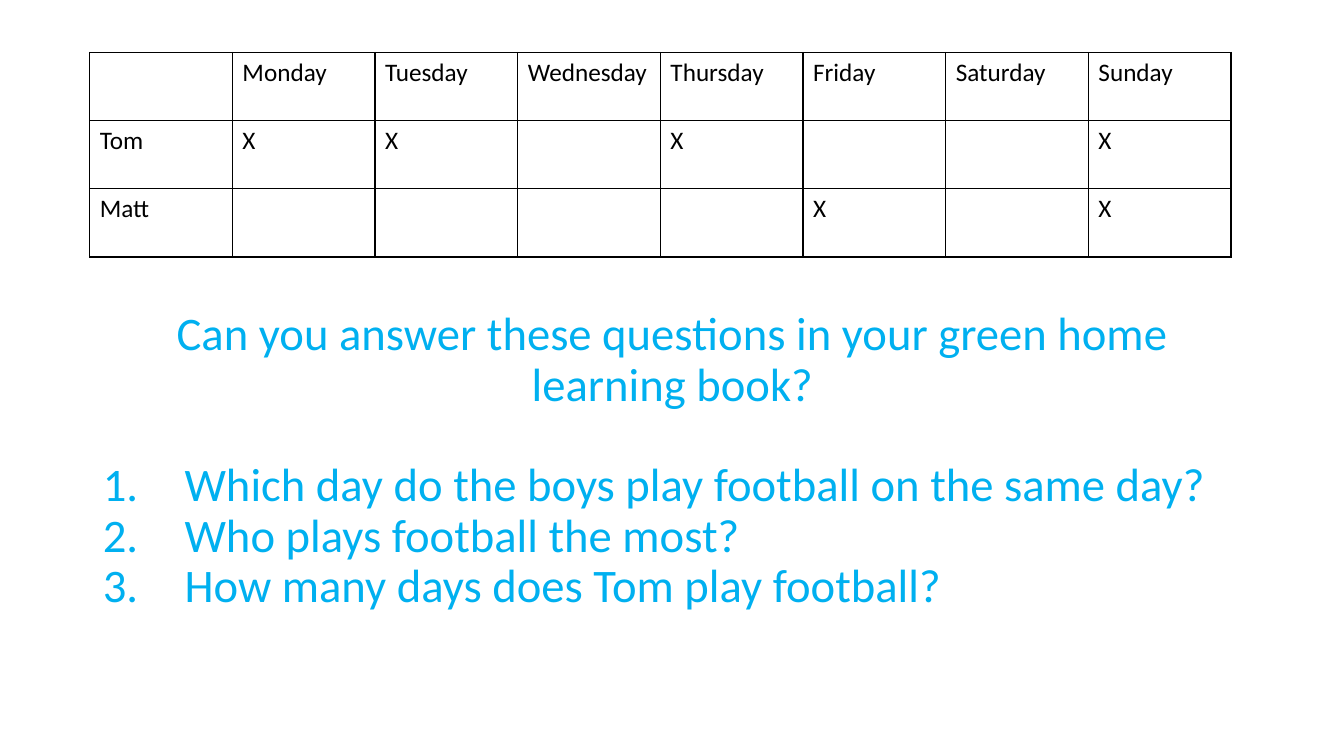
from dataclasses import dataclass

from lxml import etree
from pptx import Presentation
from pptx.dml.color import RGBColor
from pptx.enum import text
from pptx.oxml import ns
from pptx.util import Inches, Pt


@dataclass(frozen=True)
class Theme:
    font: str = "Calibri"
    ink: RGBColor = RGBColor(0, 0, 0)
    accent: RGBColor = RGBColor(0x00, 0xB0, 0xF0)
    table_size: float = 18
    question_size: float = 33.3
    border: float = 1


THEME = Theme()
DAYS = ["Monday", "Tuesday", "Wednesday", "Thursday", "Friday", "Saturday", "Sunday"]
FOOTBALL_DAYS = {
    "Tom": {"Monday", "Tuesday", "Thursday", "Sunday"},
    "Matt": {"Friday", "Sunday"},
}
PROMPT = "Can you answer these questions in your green home learning book?"
QUESTIONS = [
    "Which day do the boys play football on the same day?",
    "Who plays football the most?",
    "How many days does Tom play football?",
]


def format_text(paragraph, size, color):
    for run in paragraph.runs:
        run.font.name = THEME.font
        run.font.size = Pt(size)
        run.font.color.rgb = color


def add_borders(cell):
    properties = cell._tc.get_or_add_tcPr()
    for index, side in enumerate(("lnL", "lnR", "lnT", "lnB")):
        line = etree.Element(ns.qn(f"a:{side}"), w=str(Pt(THEME.border)))
        fill = etree.SubElement(line, ns.qn("a:solidFill"))
        etree.SubElement(fill, ns.qn("a:srgbClr"), val=str(THEME.ink))
        properties.insert(index, line)


def add_football_table(slide, left, top, width, height):
    rows = [["", *DAYS]]
    for boy, played in FOOTBALL_DAYS.items():
        rows.append([boy, *("X" if day in played else "" for day in DAYS)])
    table = slide.shapes.add_table(
        len(rows), len(rows[0]), left, top, width, height
    ).table
    table.first_row = table.horz_banding = False
    for row_index, row in enumerate(rows):
        for column_index, label in enumerate(row):
            cell = table.cell(row_index, column_index)
            cell.text = label
            cell.fill.background()
            format_text(cell.text_frame.paragraphs[0], THEME.table_size, THEME.ink)
            add_borders(cell)


def set_list_style(paragraph, indent, bullet, **attributes):
    """Set a hanging indent and a bullet element such as buNone or buAutoNum."""
    properties = paragraph._p.get_or_add_pPr()
    properties.set("marL", str(indent))
    properties.set("indent", str(-indent))
    etree.SubElement(properties, ns.qn(f"a:{bullet}"), **attributes)


def fill_questions(body, left, top, width, height):
    body.left, body.top, body.width, body.height = left, top, width, height
    frame = body.text_frame
    frame.text = "\n".join([PROMPT, *QUESTIONS])
    frame.auto_size = text.MSO_AUTO_SIZE.NONE
    frame.vertical_anchor = text.MSO_ANCHOR.TOP
    prompt, *questions = frame.paragraphs
    for paragraph in frame.paragraphs:
        paragraph.line_spacing = 0.9
        paragraph.space_before = Pt(0)
        format_text(paragraph, THEME.question_size, THEME.accent)
    prompt.alignment = text.PP_ALIGN.CENTER
    set_list_style(prompt, 0, "buNone")
    questions[0].space_before = Pt(36)
    for question in questions:
        question.alignment = text.PP_ALIGN.LEFT
        set_list_style(question, Inches(0.81), "buAutoNum", type="arabicPeriod")


def main():
    presentation = Presentation()
    presentation.slide_width = Inches(13.33)
    presentation.slide_height = Inches(7.5)
    slide = presentation.slides.add_slide(presentation.slide_layouts[1])
    title = slide.shapes.title._element
    title.getparent().remove(title)
    add_football_table(slide, Inches(0.89), Inches(0.52), Inches(11.32), Inches(2.03))
    fill_questions(
        slide.placeholders[1], Inches(0.92), Inches(3.03), Inches(11.5), Inches(3.41)
    )
    presentation.save("out.pptx")


if __name__ == "__main__":
    main()
